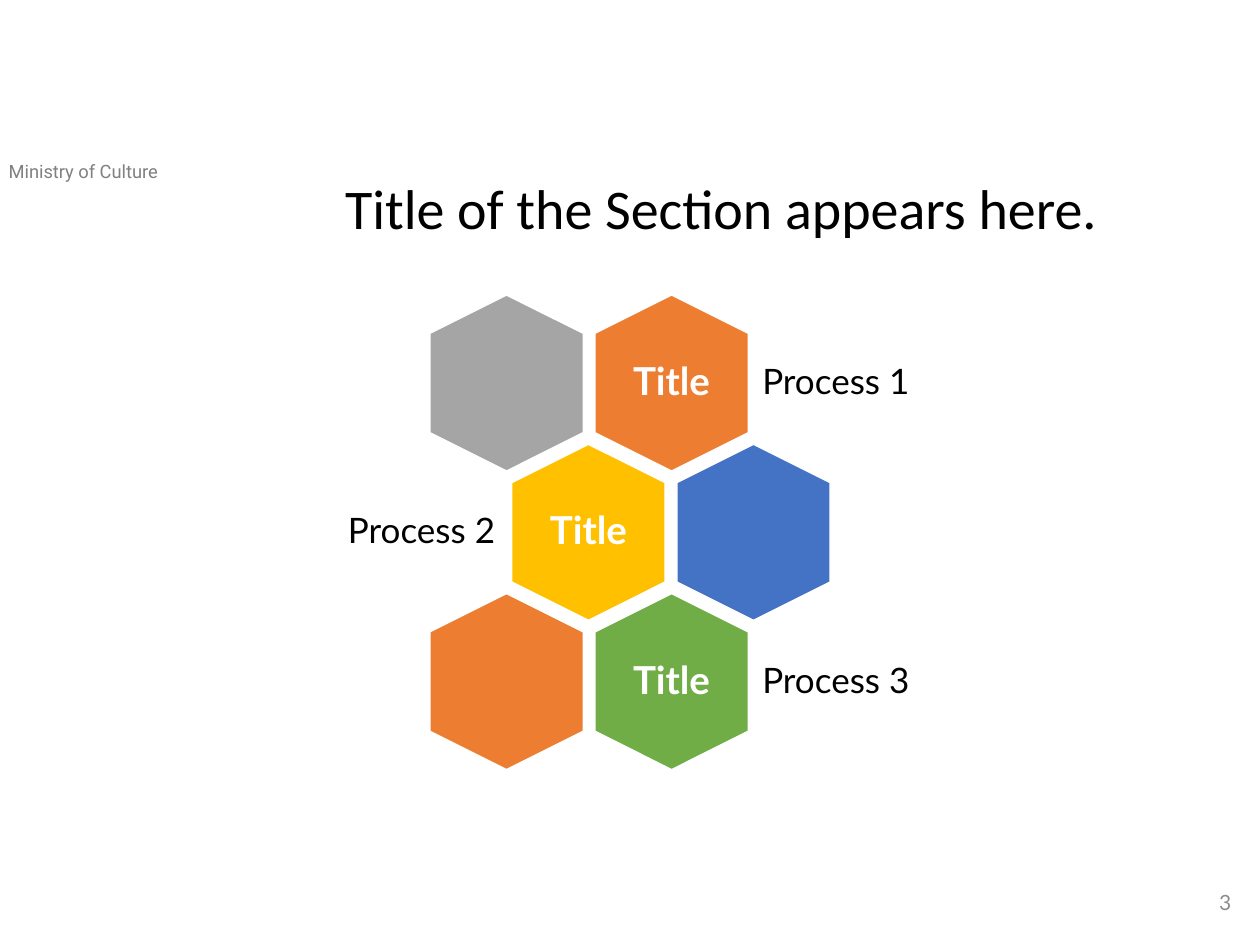
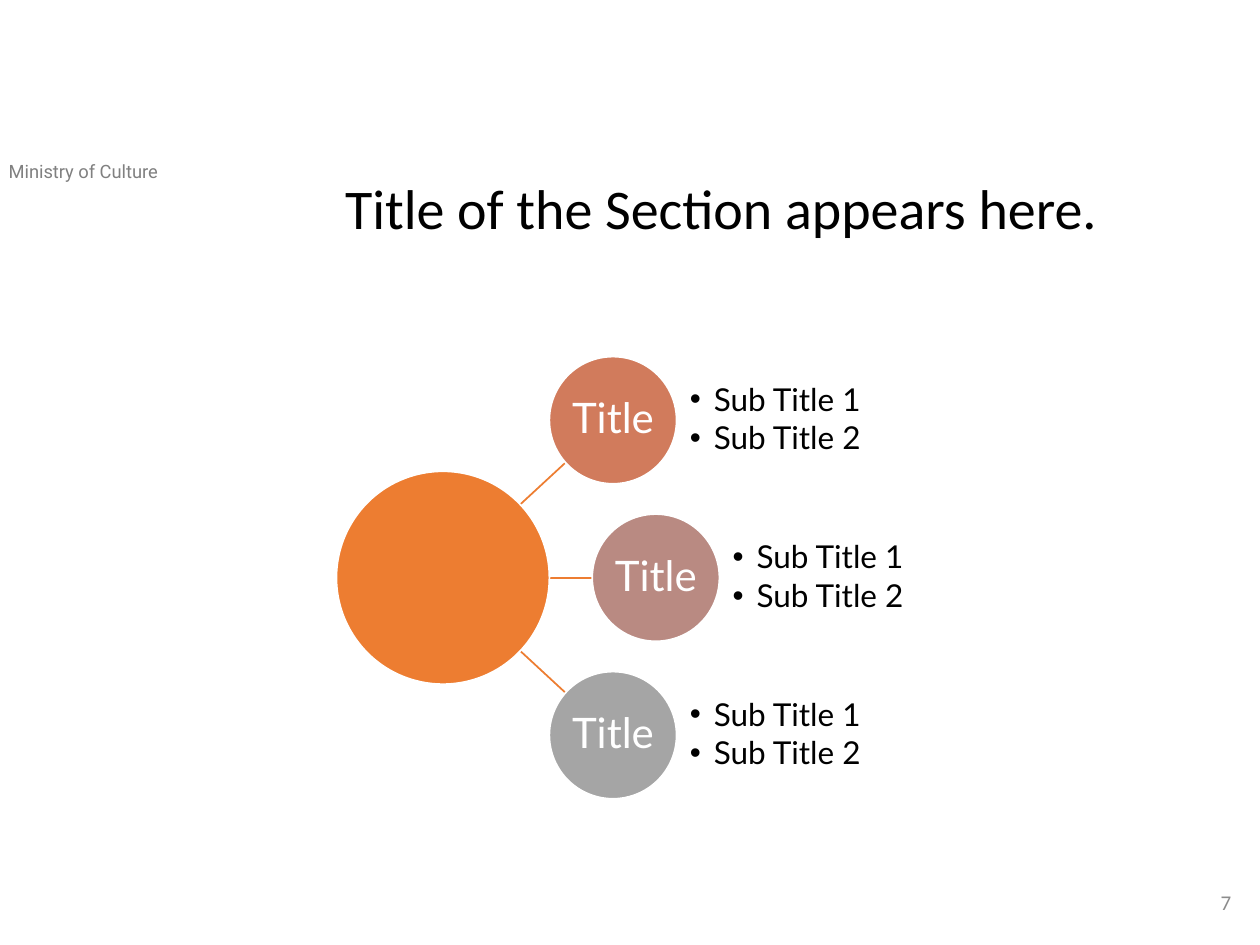
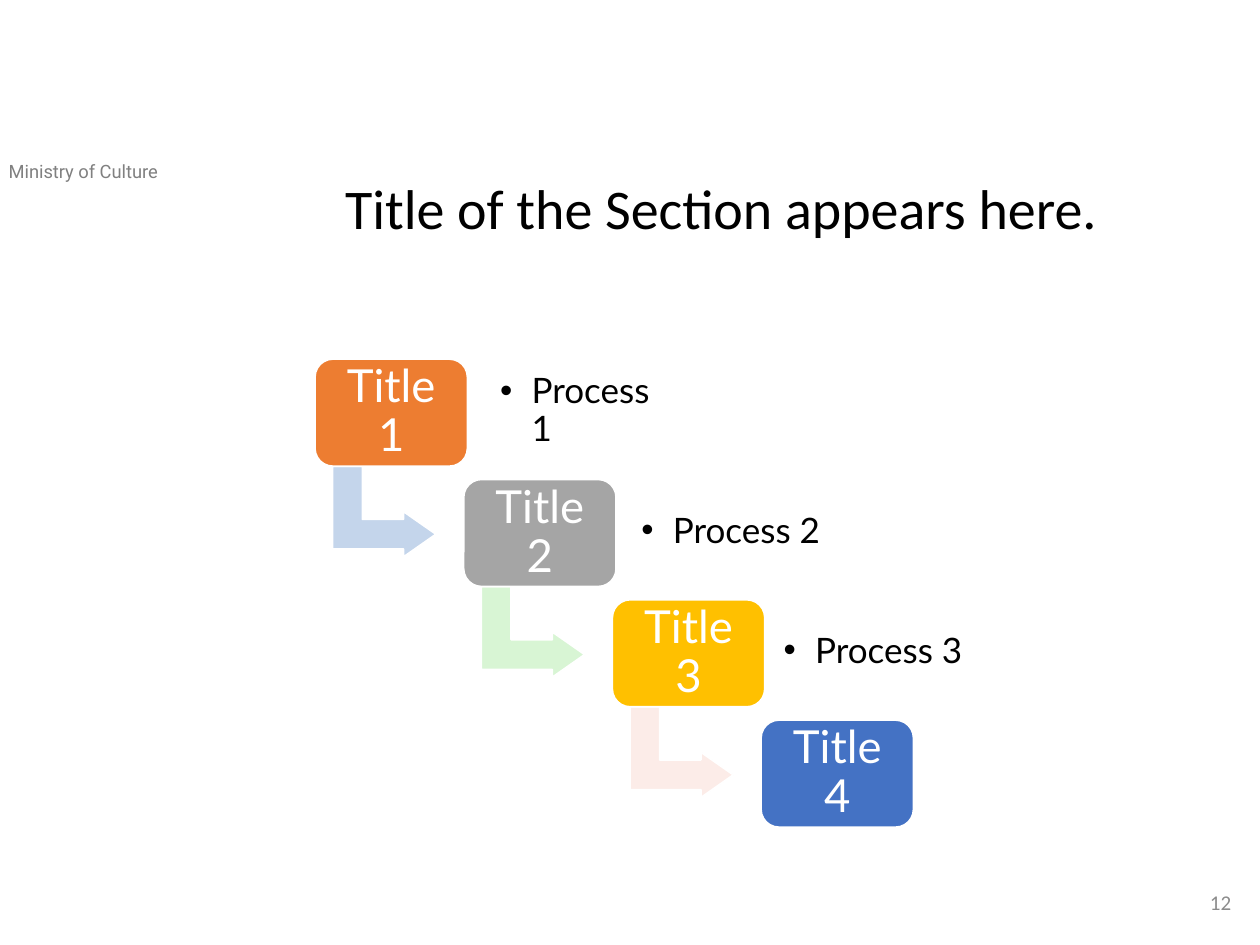
from lxml.etree import SubElement
from pptx import Presentation
from pptx.dml.color import RGBColor
from pptx.enum.shapes import MSO_CONNECTOR as Connector, MSO_SHAPE as Shape
from pptx.enum.text import MSO_ANCHOR as Anchor, PP_ALIGN as Align
from pptx.oxml.ns import qn
from pptx.util import Inches, Pt

COLORS = {
    "white": "FFFFFF", "black": "000000", "header": "808080", "number": "8C8C8C",
    "orange": "ED7D31", "gray": "A5A5A5", "gold": "FFC000", "blue": "4472C4",
    "green": "70AD47", "terracotta": "D17B5C", "rose": "B98A82",
    "pale_blue": "C4D5EB", "pale_green": "D8F5D4", "pale_pink": "FCECE8",
}
SECTION_TITLE = "Title of the Section appears here."


def rgb(name):
    """Return the named colour."""
    return RGBColor.from_string(COLORS[name])


def add_bullet(paragraph, indent):
    """Give a paragraph a hanging round bullet."""
    properties = paragraph._p.get_or_add_pPr()
    properties.set("marL", str(Inches(indent)))
    properties.set("indent", str(-Inches(indent)))
    SubElement(properties, qn("a:buFont")).set("typeface", "Arial")
    SubElement(properties, qn("a:buChar")).set("char", "•")


def write(shape, lines, size, color="black", font="Lato", bold=False, align=Align.LEFT,
          anchor=Anchor.MIDDLE, inset=None, spacing=0.9, indent=None):
    """Fill a shape's text frame with evenly styled paragraphs."""
    frame = shape.text_frame
    frame.word_wrap = True
    frame.vertical_anchor = anchor
    if inset is not None:
        frame.margin_left = frame.margin_right = Inches(inset)
        frame.margin_top = frame.margin_bottom = Inches(inset)
    frame.text = "\n".join(lines)
    for index, paragraph in enumerate(frame.paragraphs):
        paragraph.alignment = align
        paragraph.line_spacing = spacing
        if index:
            paragraph.space_before = Pt(size * 0.15)
        if indent:
            add_bullet(paragraph, indent)
        paragraph.font.name = font
        paragraph.font.size = Pt(size)
        paragraph.font.bold = bold
        paragraph.font.color.rgb = rgb(color)


def add_text(slide, box, lines, size, **style):
    """Add a text box at left, top, width, height."""
    write(slide.shapes.add_textbox(*map(Inches, box)), lines, size, **style)


def add_filled(slide, kind, box, color, rotation=0, adjustments=()):
    """Add a filled preset shape with a thin white outline."""
    shape = slide.shapes.add_shape(kind, *map(Inches, box))
    shape.shadow.inherit = False
    shape.fill.solid()
    shape.fill.fore_color.rgb = rgb(color)
    shape.line.color.rgb = rgb("white")
    shape.line.width = Pt(1)
    shape.rotation = rotation
    for index, value in enumerate(adjustments):
        shape.adjustments[index] = value
    return shape


def add_spoke(slide, start, end):
    """Add a thin orange line between two points."""
    spoke = slide.shapes.add_connector(Connector.STRAIGHT, *map(Inches, (*start, *end)))
    spoke.line.color.rgb = rgb("orange")
    spoke.line.width = Pt(1)
    SubElement(spoke._element.spPr, qn("a:effectLst"))


def add_section_slide(presentation, number, number_font="Calibri"):
    """Add a slide with the shared header, section title and page number."""
    slide = presentation.slides.add_slide(presentation.slide_layouts[6])
    add_text(slide, (-0.03, 1.22, 2.18, 0.28), ["Ministry of Culture"], 10.5,
             color="header", font="Roboto", anchor=Anchor.TOP, spacing=1)
    add_text(slide, (2.64, 1.39, 6.62, 0.79), [SECTION_TITLE], 32,
             font="Calibri", anchor=Anchor.TOP)
    add_text(slide, (7.62, 6.96, 2.25, 0.4), [str(number)], 12,
             color="number", font=number_font, align=Align.RIGHT, spacing=1)
    return slide


def add_honeycomb(slide, left, top):
    """Draw three staggered rows of two hexagons with process labels."""
    rows = [
        (0, ("gray", "orange"), 1, "Process 1"),
        (0.65, ("gold", "blue"), 0, "Process 2"),
        (0, ("orange", "green"), 1, "Process 3"),
    ]
    for row, (shift, colors, titled, process) in enumerate(rows):
        y = top + row * 1.185
        for column, color in enumerate(colors):
            x = left + shift + column * 1.31
            add_filled(slide, Shape.HEXAGON, (x, y, 1.4, 1.22), color, 90, (0.25,))
            if column == titled:
                add_text(slide, (x + 0.28, y + 0.13, 0.84, 0.96), ["Title"], 22,
                         color="white", bold=True, align=Align.CENTER, inset=0.09)
                offset, width, align = (
                    (1.34, 1.56, Align.LEFT) if column else (-1.47, 1.51, Align.RIGHT))
                add_text(slide, (x + offset, y + 0.19, width, 0.84), [process], 20,
                         align=align, inset=0.08)


def add_radial(slide, left, top):
    """Draw a hub with three linked circles and their subtitles."""
    hub, circle, pitch = 1.69, 1.01, 1.25
    center_x, center_y = left + hub / 2, top + pitch + circle / 2
    for start, end in [((0.58, 0.55), (0.97, 0.91)), ((0.58, 0), (1.18, 0)),
                       ((0.58, -0.55), (0.97, -0.91))]:
        add_spoke(slide, (center_x + start[0], center_y + start[1]),
                  (center_x + end[0], center_y + end[1]))
    add_filled(slide, Shape.OVAL, (left, center_y - hub / 2, hub, hub), "orange")
    for row, (shift, color) in enumerate(
            [(1.69, "terracotta"), (2.03, "rose"), (1.69, "gray")]):
        x, y = left + shift, top + row * pitch
        satellite = add_filled(slide, Shape.OVAL, (x, y, circle, circle), color)
        write(satellite, ["Title"], 24, color="white", align=Align.CENTER, inset=0.02)
        add_text(slide, (x + 1.115, y, 1.52, circle), ["Sub Title 1", "Sub Title 2"], 18,
                 inset=0, indent=0.19)


def add_staircase(slide, left, top):
    """Draw four descending steps joined by bent arrows."""
    steps = [
        ("orange", "pale_blue", 1.36, 1.6),
        ("gray", "pale_green", 1.3, 2.35),
        ("gold", "pale_pink", 1.25, 1.97),
        ("blue", None, None, None),
    ]
    for index, (color, arrow_color, offset, width) in enumerate(steps):
        x, y = left + index * 1.18, top + index * 0.955
        if arrow_color:
            add_filled(slide, Shape.BENT_UP_ARROW, (x + 0.19, y + 0.8, 0.72, 0.82),
                       arrow_color, 90, (0.328, 0.25, 0.358))
            add_text(slide, (x + offset, y + 0.07, width, 0.69), [f"Process {index + 1}"], 20,
                     inset=0.11, indent=0.25)
        step = add_filled(slide, Shape.ROUNDED_RECTANGLE, (x, y, 1.21, 0.85), color,
                          adjustments=(0.167,))
        write(step, [f"Title {index + 1}"], 26, color="white", align=Align.CENTER, inset=0.11)


def main():
    """Build the three section slides."""
    presentation = Presentation()
    presentation.slide_width, presentation.slide_height = Inches(10), Inches(7.5)
    add_honeycomb(add_section_slide(presentation, 3, "Lato"), 3.32, 2.43)
    add_radial(add_section_slide(presentation, 7), 2.67, 2.83)
    add_staircase(add_section_slide(presentation, 12), 2.5, 2.85)
    presentation.save("out.pptx")


if __name__ == "__main__":
    main()
